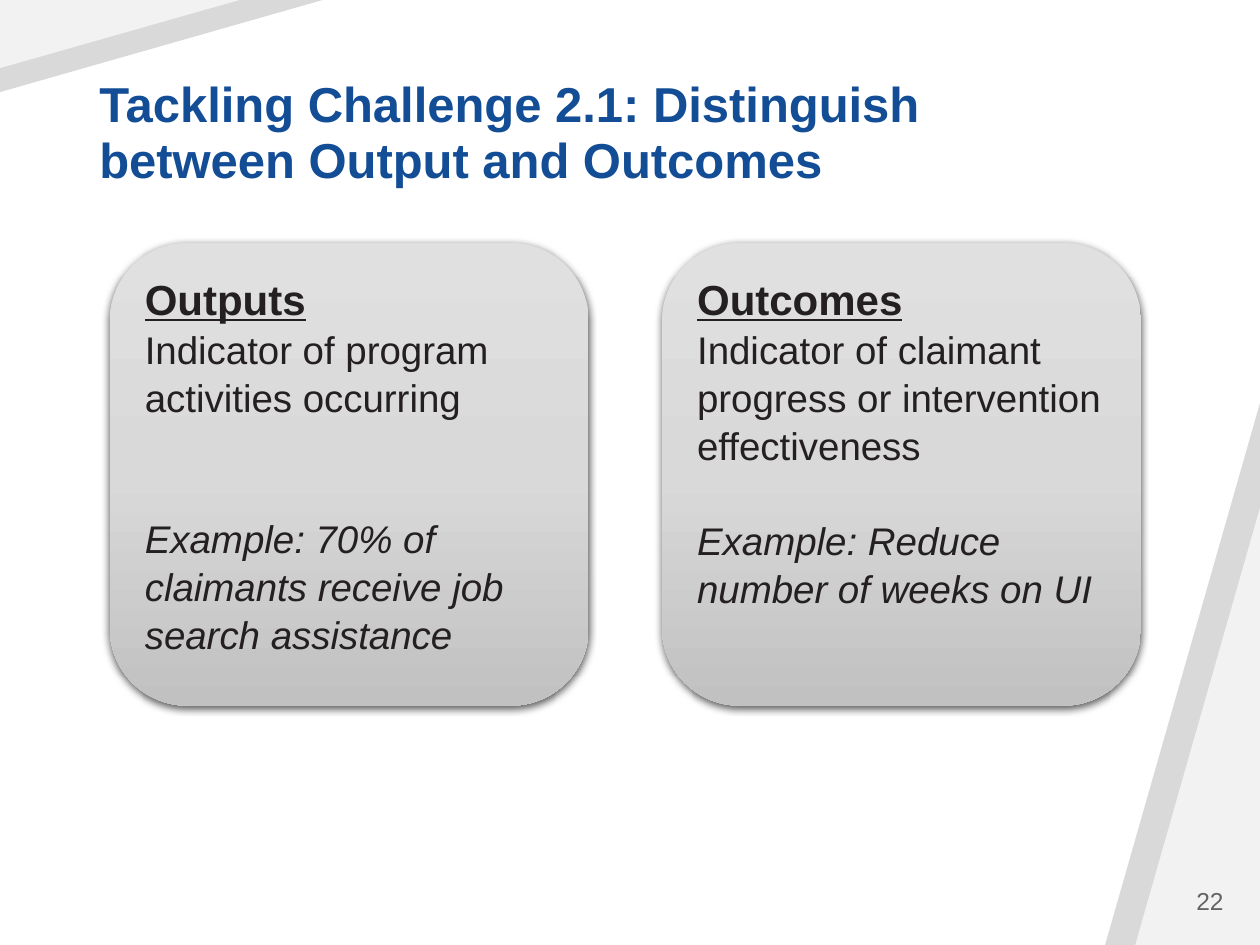
"""Build a slide that contrasts outputs with outcomes on two cards."""
from copy import deepcopy
from dataclasses import dataclass

from pptx import Presentation
from pptx.dml.color import RGBColor
from pptx.enum.shapes import MSO_SHAPE
from pptx.enum.text import MSO_ANCHOR, PP_ALIGN
from pptx.oxml import parse_xml
from pptx.oxml.ns import nsdecls, qn
from pptx.util import Pt


@dataclass(frozen=True)
class Theme:
    font: str = "Arial"
    title: str = "124D95"
    body: str = "242021"
    number: str = "646464"
    band: str = "D9D9D9"
    corner: str = "F2F2F2"
    card: tuple = ((0, "E0E0E0"), (0.5, "D9D9D9"), (1, "C1C1C1"))
    title_size: int = 28
    head_size: int = 24
    body_size: int = 22
    number_size: int = 14


T = Theme()
SHADOW = (
    f'<a:outerShdw {nsdecls("a")} blurRad="{Pt(4.5)}" dist="{Pt(1.5)}" dir="5400000"'
    ' algn="ctr" rotWithShape="0"><a:srgbClr val="000000"><a:alpha val="63000"/>'
    "</a:srgbClr></a:outerShdw>"
)


def set_all(obj, values):
    for name, value in values.items():
        setattr(obj, name, value)


def write(p, text, size, color, para=None, **font):
    p.text = text
    set_all(p, para or {})
    set_all(p.font, {"name": T.font, "size": Pt(size), **font})
    p.font.color.rgb = RGBColor.from_string(color)


def add_text(s, box, anchor, *args, **kwargs):
    tf = s.shapes.add_textbox(*map(Pt, box)).text_frame
    set_all(tf, {"word_wrap": True, "vertical_anchor": anchor})
    write(tf.paragraphs[0], *args, **kwargs)


def add_corner(s, box, color, rotation=0):
    sp = s.shapes.add_shape(MSO_SHAPE.ISOSCELES_TRIANGLE, *map(Pt, box))
    sp.adjustments[0] = 1
    sp.rotation = rotation
    sp.shadow.inherit = False
    sp.fill.solid()
    sp.fill.fore_color.rgb = RGBColor.from_string(color)
    sp.line.fill.background()


def fill_card(sp):
    sp.fill.gradient()
    sp.fill.gradient_angle = 270
    stops = sp._element.spPr.find(f".//{qn('a:gsLst')}")
    stops.append(deepcopy(stops[0]))
    for stop, (position, color) in zip(sp.fill.gradient_stops, T.card):
        stop.position = position
        stop.color.rgb = RGBColor.from_string(color)
    sp.line.fill.background()
    sp.shadow.inherit = False
    sp._element.spPr.find(qn("a:effectLst")).append(parse_xml(SHADOW))


def add_card(s, left, head, meaning, example, gap):
    sp = s.shapes.add_shape(
        MSO_SHAPE.ROUNDED_RECTANGLE, Pt(left), Pt(138.8), Pt(273.6), Pt(264.4)
    )
    fill_card(sp)
    tf = sp.text_frame
    set_all(tf, {"word_wrap": True, "vertical_anchor": MSO_ANCHOR.TOP})
    para = {"alignment": PP_ALIGN.LEFT, "line_spacing": 1.04}
    write(tf.paragraphs[0], head, T.head_size, T.body, para, bold=True, underline=True)
    write(tf.add_paragraph(), meaning, T.body_size, T.body, para)
    spaced = {**para, "space_before": Pt(gap)}
    write(tf.add_paragraph(), example, T.body_size, T.body, spaced, italic=True)


def main():
    prs = Presentation()
    set_all(prs, {"slide_width": Pt(720), "slide_height": Pt(540)})
    s = prs.slides.add_slide(prs.slide_layouts[6])
    for width, height, color in ((88.5, 309.6, T.band), (71.3, 249.8, T.corner)):
        add_corner(s, (720 - width, 540 - height, width, height), color)
    for width, height, color in ((184.3, 52.6, T.band), (136.8, 38.9, T.corner)):
        add_corner(s, (0, 0, width, height), color, rotation=180)
    add_text(s, (605.5, 500.4, 100.8, 28.8), MSO_ANCHOR.MIDDLE, "22",
             T.number_size, T.number, {"alignment": PP_ALIGN.RIGHT})
    add_text(s, (49.7, 28.8, 626.4, 82.8), MSO_ANCHOR.BOTTOM,
             "Tackling Challenge 2.1: Distinguish \vbetween Output and Outcomes",
             T.title_size, T.title, {"line_spacing": 0.94}, bold=True)
    add_card(s, 62.8, "Outputs", "Indicator of program activities occurring",
             "Example: 70% of claimants receive job search assistance", 53)
    add_card(s, 378.4, "Outcomes",
             "Indicator of claimant progress or intervention effectiveness",
             "Example: Reduce number of weeks on UI", 27)
    prs.save("out.pptx")


if __name__ == "__main__":
    main()
